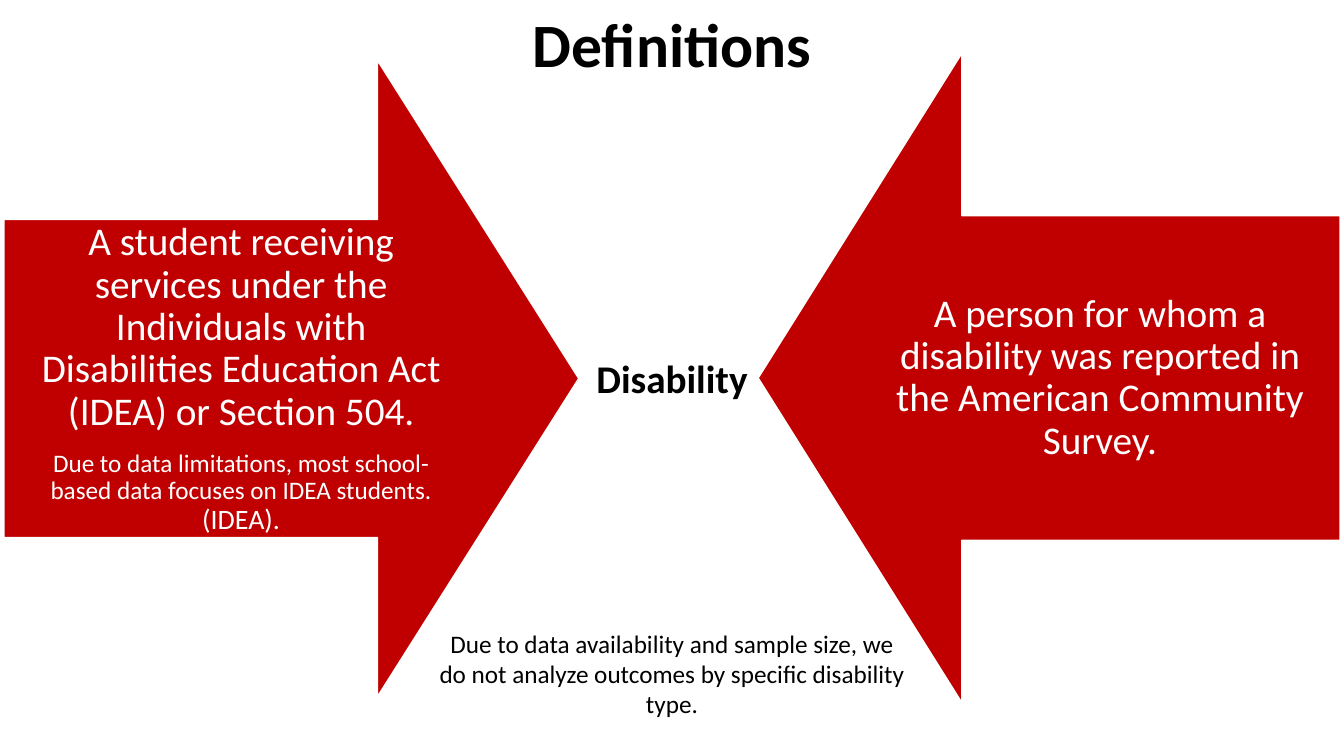
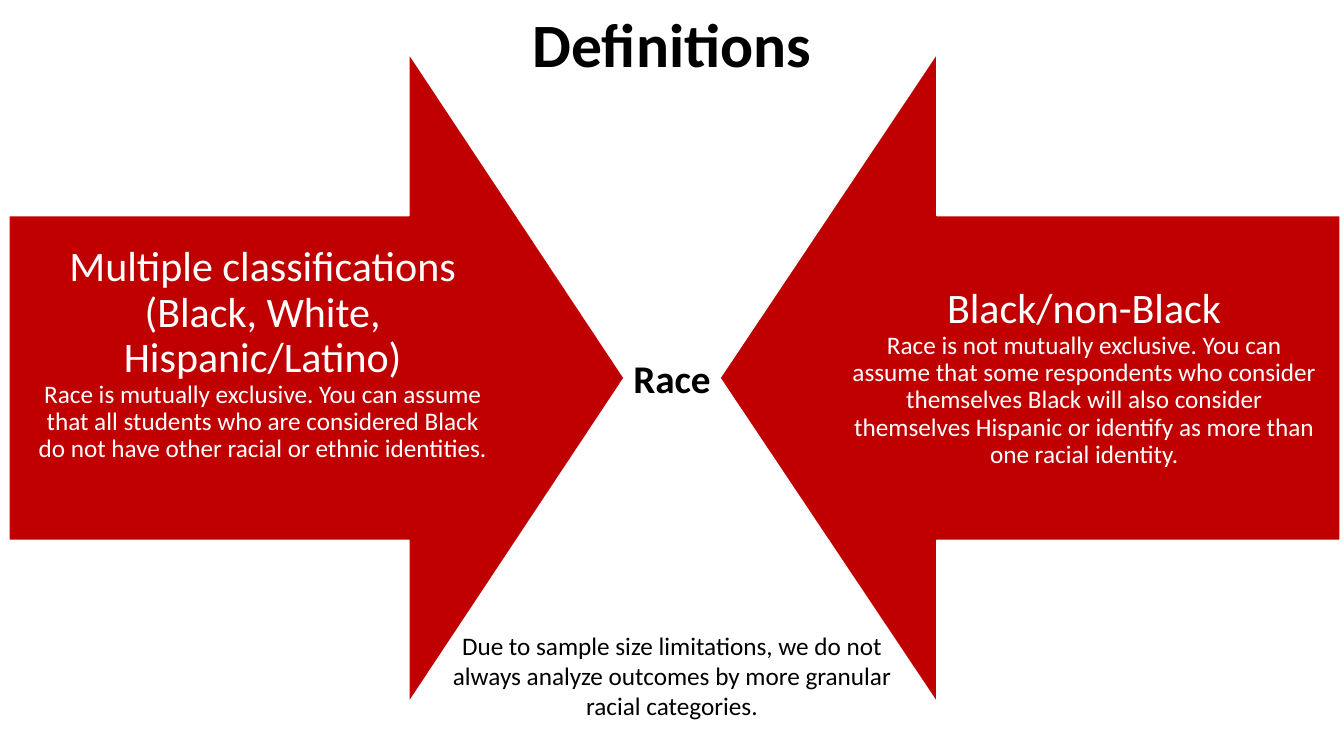
from pptx import Presentation
from pptx.dml.color import RGBColor
from pptx.enum.shapes import MSO_SHAPE
from pptx.enum.text import MSO_ANCHOR, PP_ALIGN
from pptx.util import Emu, Pt

RIGHT, LEFT = MSO_SHAPE.RIGHT_ARROW, MSO_SHAPE.LEFT_ARROW
TOP, MIDDLE = MSO_ANCHOR.TOP, MSO_ANCHOR.MIDDLE
CENTER = PP_ALIGN.CENTER

EMU_PER_PX = 9144
WIDTH, HEIGHT = 1333, 750
COLORS = {"arrow": "C00000", "light": "FFFFFF", "dark": "000000"}


def px(value):
    return Emu(value * EMU_PER_PX)


def color(name):
    return RGBColor.from_string(COLORS[name])


def set_values(target, values):
    for name, value in values.items():
        setattr(target, name, value)


class DefinitionDeck:
    font_name = "Calibri"
    arrow_adjustments = (0.5, 0.35)

    def __init__(self):
        self.deck = Presentation()
        set_values(self.deck, {"slide_width": px(WIDTH), "slide_height": px(HEIGHT)})
        self.page = None

    def add_page(self):
        self.page = self.deck.slides.add_slide(self.deck.slide_layouts[6])

    def fill_frame(self, frame, paragraphs, ink, spacing, gap=0, bold=False):
        for index, spans in enumerate(paragraphs):
            para = frame.add_paragraph() if index else frame.paragraphs[0]
            set_values(para, {"alignment": CENTER, "line_spacing": spacing,
                              "space_after": Pt(gap)})
            for text, size in spans:
                if text == "\n":
                    para.add_line_break()
                    continue
                span = para.add_run()
                span.text = text
                set_values(span.font, {"name": self.font_name, "size": Pt(size),
                                       "bold": bold})
                span.font.color.rgb = color(ink)

    def text(self, bounds, text, size, spacing=0.9, bold=False, anchor=TOP):
        box = self.page.shapes.add_textbox(*map(px, bounds))
        set_values(box.text_frame, {"word_wrap": True, "vertical_anchor": anchor})
        self.fill_frame(box.text_frame, [[(text, size)]], "dark", spacing, bold=bold)

    def title(self, text):
        self.text((0, 0, WIDTH, 94), text, 44, bold=True, anchor=MIDDLE)

    def term(self, text):
        self.text((581, 352, 171, 47), text, 28, bold=True)

    def footnote(self, top, text):
        self.text((421, top, 491, 101), text, 18, spacing=1.0)

    def arrow(self, kind, bounds, paragraphs, inset, bottom_inset=None):
        shape = self.page.shapes.add_shape(kind, *map(px, bounds))
        shape.shadow.inherit = False
        for index, value in enumerate(self.arrow_adjustments):
            shape.adjustments[index] = value
        shape.fill.solid()
        shape.fill.fore_color.rgb = color("arrow")
        shape.line.color.rgb = color("light")
        shape.line.width = Pt(1)
        set_values(shape.text_frame, {
            "word_wrap": True, "vertical_anchor": MIDDLE,
            "margin_left": px(inset), "margin_right": px(inset),
            "margin_top": px(inset), "margin_bottom": px(bottom_inset or inset),
        })
        self.fill_frame(shape.text_frame, paragraphs, "light", 0.9, gap=12)


PAGES = [
    {
        "term": "Disability",
        "arrows": [
            (RIGHT, (4, 60, 570, 631), [
                [("A student receiving services under the Individuals with "
                  "Disabilities Education Act (IDEA) or Section 504.", 28)],
                [("Due to data limitations, most school-based data focuses "
                  "on IDEA students. ", 18), ("(IDEA).", 20)],
            ], 22),
            (LEFT, (752, 53, 577, 644), [
                [("A person for whom a disability was reported in the "
                  "American Community Survey.", 28)],
            ], 22),
        ],
        "footnote": (618, "Due to data availability and sample size, we do not "
                          "analyze outcomes by specific disability type."),
    },
    {
        "term": "Race",
        "arrows": [
            (RIGHT, (9, 53, 610, 644), [
                [("Multiple classifications (Black, White, Hispanic/Latino)", 30),
                 ("\n", 18),
                 ("Race is mutually exclusive. You can assume that all students "
                  "who are considered Black do not have other racial or ethnic "
                  "identities.", 18)],
            ], 23, 70),
            (LEFT, (714, 53, 615, 644), [
                [("Black/non-Black", 30),
                 ("\n", 18),
                 ("Race is not mutually exclusive. You can assume that some "
                  "respondents who consider themselves Black will also consider "
                  "themselves Hispanic or identify as more than one racial "
                  "identity.", 18)],
            ], 23),
        ],
        "footnote": (620, "Due to sample size limitations, we do not always "
                          "analyze outcomes by more granular racial categories."),
    },
]


def main():
    builder = DefinitionDeck()
    for content in PAGES:
        builder.add_page()
        builder.title("Definitions")
        for arrow in content["arrows"]:
            builder.arrow(*arrow)
        builder.footnote(*content["footnote"])
        builder.term(content["term"])
    builder.deck.save("out.pptx")


if __name__ == "__main__":
    main()
